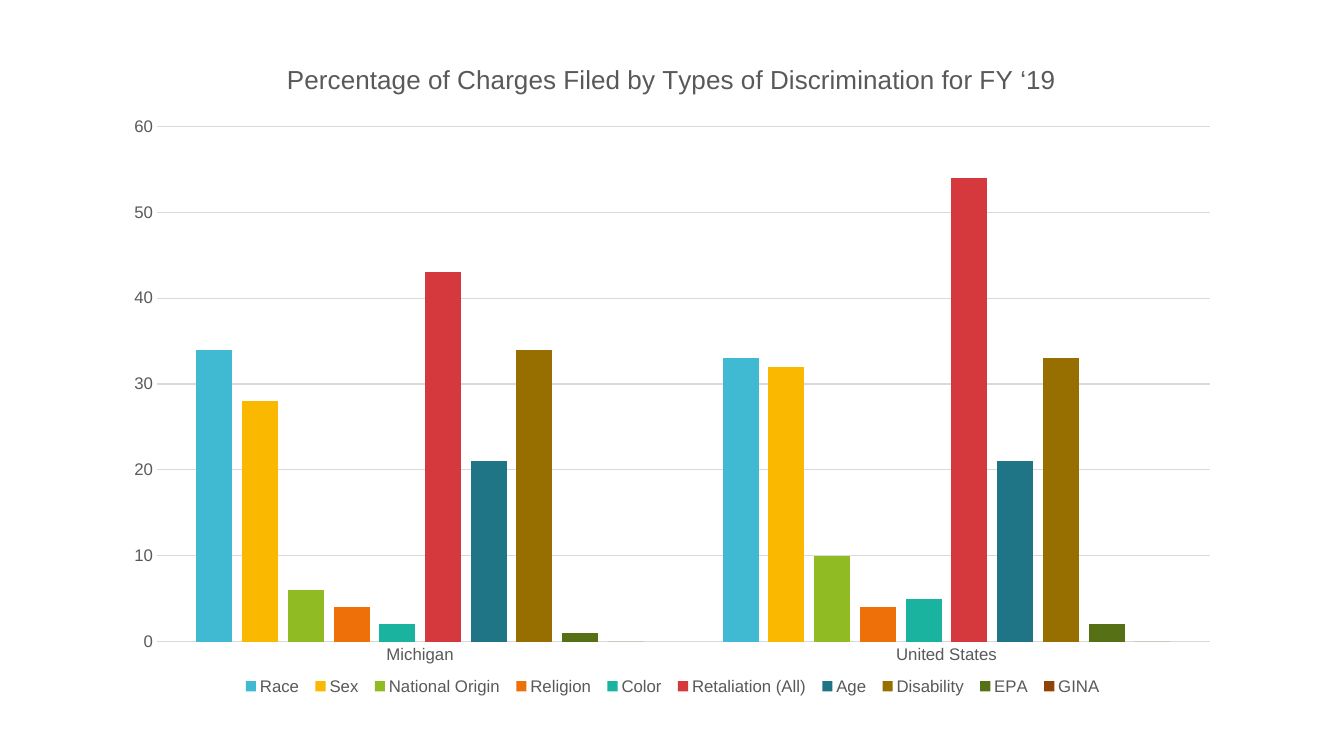
from dataclasses import dataclass
from typing import Optional

from pptx import Presentation
from pptx import oxml
from pptx import util as u
from pptx.chart import data as chart_data
from pptx.dml import color
from pptx.enum import chart as chart_enum
from pptx.oxml import ns

FONT = "Arial"
TEXT_COLOUR = "595959"
LINE_COLOUR = "D9D9D9"
TITLE = "Percentage of Charges Filed by Types of Discrimination for FY ‘19"


@dataclass(frozen=True)
class ChargeType:
    name: str
    michigan: int
    united_states: int
    colour: str


@dataclass(frozen=True)
class Area:
    left: float
    top: float
    width: Optional[float] = None
    height: Optional[float] = None


CHART_AREA = Area(80, 33, 800.6, 474.5)
TITLE_AREA = Area(201.6, 41)
PLOT_AREA = Area(112.1, 90.4, 752.1, 367.9)
LEGEND_AREA = Area(168, 482, 625, 16.5)

CHARGE_TYPES = [
    ChargeType("Race", 34, 33, "40BAD2"),
    ChargeType("Sex", 28, 32, "FAB900"),
    ChargeType("National Origin", 6, 10, "90BB23"),
    ChargeType("Religion", 4, 4, "EE7008"),
    ChargeType("Color", 2, 5, "1AB39F"),
    ChargeType("Retaliation (All)", 43, 54, "D5393D"),
    ChargeType("Age", 21, 21, "1F7485"),
    ChargeType("Disability", 34, 33, "966F00"),
    ChargeType("EPA", 1, 2, "567015"),
    ChargeType("GINA", 0, 0, "8F4305"),
]


def rgb(value: str) -> color.RGBColor:
    return color.RGBColor.from_string(value)


def style_font(font, size: float) -> None:
    font.name = FONT
    font.size = u.Pt(size)
    font.bold = False
    font.color.rgb = rgb(TEXT_COLOUR)


def style_line(line) -> None:
    line.color.rgb = rgb(LINE_COLOUR)
    line.width = u.Pt(0.75)


def place(chart, part_name: str, index: int, area: Area) -> None:
    element = chart.element.xpath(f"c:chart/c:{part_name}")[0]
    for layout in element.findall(ns.qn("c:layout")):
        element.remove(layout)
    settings = [("layoutTarget", "inner")] if part_name == "plotArea" else []
    settings += [("xMode", "edge"), ("yMode", "edge")]
    settings.append(("x", (area.left - CHART_AREA.left) / CHART_AREA.width))
    settings.append(("y", (area.top - CHART_AREA.top) / CHART_AREA.height))
    if area.width is not None:
        settings.append(("w", area.width / CHART_AREA.width))
        settings.append(("h", area.height / CHART_AREA.height))
    children = "".join(f'<c:{name} val="{value}"/>' for name, value in settings)
    element.insert(index, oxml.parse_xml(
        f'<c:layout {ns.nsdecls("c")}><c:manualLayout>{children}</c:manualLayout></c:layout>'
    ))


def add_charges_chart(slide):
    charges = chart_data.CategoryChartData()
    charges.categories = ["Michigan", "United States"]
    for charge in CHARGE_TYPES:
        charges.add_series(charge.name, (charge.michigan, charge.united_states))
    frame = slide.shapes.add_chart(
        chart_enum.XL_CHART_TYPE.COLUMN_CLUSTERED,
        u.Pt(CHART_AREA.left), u.Pt(CHART_AREA.top),
        u.Pt(CHART_AREA.width), u.Pt(CHART_AREA.height), charges,
    )
    return frame.chart


def style_columns(plot) -> None:
    plot.gap_width = 219
    plot.overlap = -27
    plot.vary_by_categories = False
    for series, charge in zip(plot.series, CHARGE_TYPES):
        series.format.fill.solid()
        series.format.fill.fore_color.rgb = rgb(charge.colour)
        series.invert_if_negative = False


def style_axes(chart) -> None:
    for axis in (chart.category_axis, chart.value_axis):
        axis.major_tick_mark = chart_enum.XL_TICK_MARK.NONE
        axis.minor_tick_mark = chart_enum.XL_TICK_MARK.NONE
        style_font(axis.tick_labels.font, 12)
    style_line(chart.category_axis.format.line)
    value_axis = chart.value_axis
    value_axis.minimum_scale = 0
    value_axis.maximum_scale = 60
    value_axis.major_unit = 10
    value_axis.format.line.fill.background()
    value_axis.has_major_gridlines = True
    style_line(value_axis.major_gridlines.format.line)
    value_axis.tick_labels.number_format = "0"
    value_axis.tick_labels.number_format_is_linked = False


def style_title_and_legend(chart) -> None:
    chart.has_title = True
    chart.chart_title.include_in_layout = False
    paragraph = chart.chart_title.text_frame.paragraphs[0]
    paragraph.add_run().text = TITLE
    style_font(paragraph.font, 18.6)
    chart.has_legend = True
    chart.legend.position = chart_enum.XL_LEGEND_POSITION.BOTTOM
    chart.legend.include_in_layout = False
    style_font(chart.legend.font, 12)


def main() -> None:
    presentation = Presentation()
    presentation.slide_width = u.Pt(960)
    presentation.slide_height = u.Pt(540)
    slide = presentation.slides.add_slide(presentation.slide_layouts[6])
    chart = add_charges_chart(slide)
    style_font(chart.font, 10)
    style_columns(chart.plots[0])
    style_axes(chart)
    style_title_and_legend(chart)
    place(chart, "title", 1, TITLE_AREA)
    place(chart, "plotArea", 0, PLOT_AREA)
    place(chart, "legend", 1, LEGEND_AREA)
    presentation.save("out.pptx")


if __name__ == "__main__":
    main()
